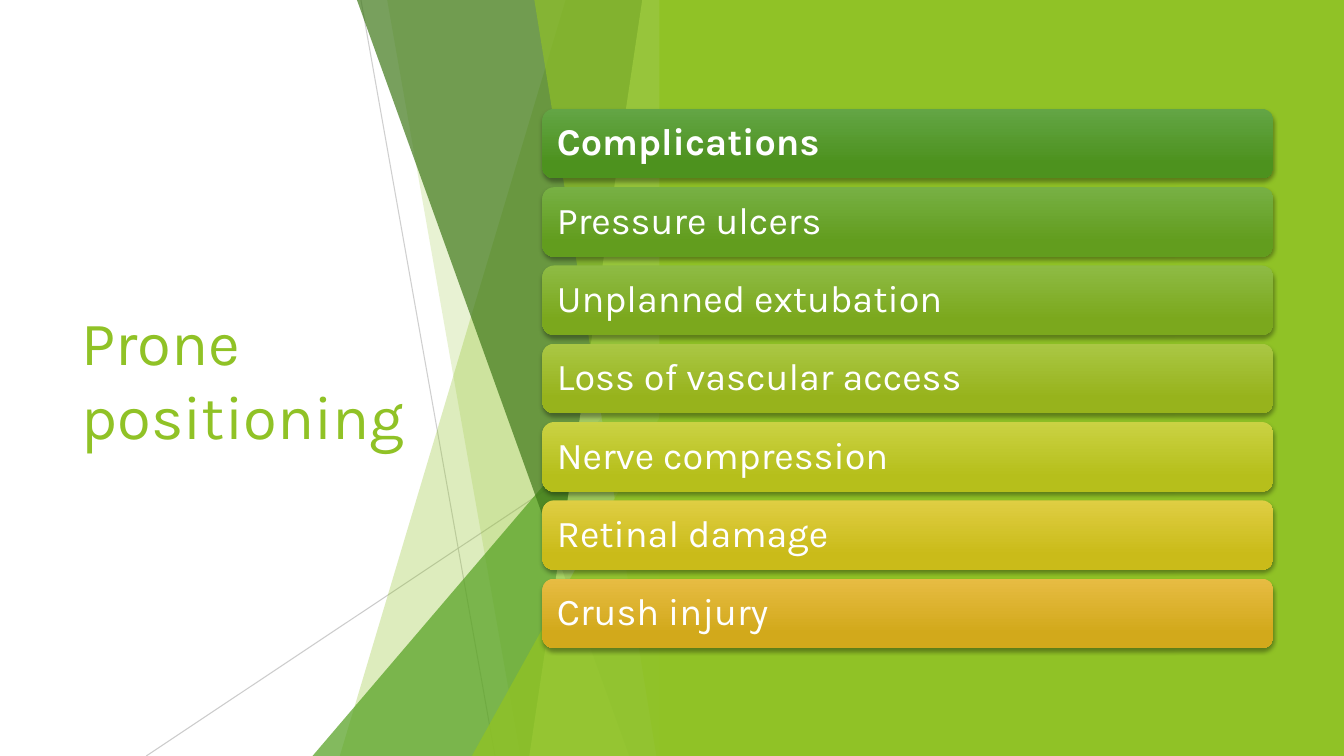
from lxml import etree
from pptx import Presentation
from pptx.dml.color import RGBColor
from pptx.enum.shapes import MSO_CONNECTOR, MSO_SHAPE
from pptx.enum.text import MSO_ANCHOR, MSO_AUTO_SIZE, PP_ALIGN
from pptx.oxml.ns import qn
from pptx.util import Inches, Pt

STRAIGHT = MSO_CONNECTOR.STRAIGHT
TRIANGLE, RECT, ROUNDED = MSO_SHAPE.ISOSCELES_TRIANGLE, MSO_SHAPE.RECTANGLE, MSO_SHAPE.ROUNDED_RECTANGLE
MIDDLE, LEFT, NO_FIT = MSO_ANCHOR.MIDDLE, PP_ALIGN.LEFT, MSO_AUTO_SIZE.NONE

WIDTH, HEIGHT = 13.33, 7.5
FONT = "Karla"
COLORS = {"lime": "90C226", "green": "54A021", "forest": "3F7819", "pale": "C0E474",
          "gray": "BFBFBF", "white": "FFFFFF", "shadow": "000000"}
BARS = [
    ("Complications", "63A545", "4D921E"),
    ("Pressure ulcers", "77B044", "629D1E"),
    ("Unplanned extubation", "8EBB44", "7BA81D"),
    ("Loss of vascular access", "AAC744", "97B31C"),
    ("Nerve compression", "CAD243", "B6BF1B"),
    ("Retinal damage", "DFCE43", "CABB19"),
    ("Crush injury", "E7BC43", "D2A91B"),
]
RAYS = [(3.08, 0, 1.75, 75), (0, 4.03, 5.21, 80)]
FACETS = [
    ("band", 1.05, 3.29, "lime", 30),
    ("band", 2.82, 1.5, "lime", 20),
    ("triangle", 3.56, 3.33, "green", 72),
    ("band", 3.12, 0.42, "forest", 70),
    ("band", 0.29, 1.41, "pale", 70),
    ("band", 1.36, 0.15, "lime", 65),
    ("triangle", 1.98, 3.93, "lime", 80),
]


def rgb(name):
    """Return the color for a palette name or a hex string."""
    return RGBColor.from_string(COLORS.get(name, name))


def set_alpha(shape, percent):
    """Make the shape's solid color partly transparent."""
    color = shape._element.spPr.find(".//" + qn("a:srgbClr"))
    etree.SubElement(color, qn("a:alpha"), val=str(percent * 1000))


def paint(shape, color):
    """Give the shape a flat fill without outline or shadow."""
    shape.shadow.inherit = False
    shape.line.fill.background()
    shape.fill.solid()
    shape.fill.fore_color.rgb = rgb(color)


def write(tf, text, formats):
    """Write one left-aligned, vertically centered paragraph."""
    tf.word_wrap = True
    tf.auto_size = NO_FIT
    tf.vertical_anchor = MIDDLE
    p = tf.paragraphs[0]
    p.alignment = LEFT
    r = p.add_run()
    r.text = text
    for key, value in {"name": FONT, **formats}.items():
        setattr(r.font, key, value)
    return p, r


def add_title(s, box):
    """Place the slide title in the box."""
    title = s.shapes.title
    title.left, title.top, title.width, title.height = map(Inches, box)
    r = write(title.text_frame, "Prone positioning", {"size": Pt(44)})[1]
    r.font.color.rgb = rgb("lime")


def add_facets(s, box):
    """Draw rays and translucent facets measured from the box's right edge."""
    left, top, width, height = box
    right, bottom = left + width, top + height
    for start, drop, end, alpha in RAYS:
        ray = s.shapes.add_connector(STRAIGHT, Inches(right - start), Inches(top + drop),
                                     Inches(right - end), Inches(bottom))
        ray.line.color.rgb = rgb("gray")
        ray.line.width = Pt(0.75)
        set_alpha(ray, alpha)
        etree.SubElement(ray._element.spPr, qn("a:effectLst"))
    for kind, first, second, color, alpha in FACETS:
        if kind == "band":
            corners = [(right, top), (right, bottom), (right - second, bottom)]
            builder = s.shapes.build_freeform(Inches(right - first), Inches(top))
            builder.add_line_segments([(Inches(x), Inches(y)) for x, y in corners])
            facet = builder.convert_to_shape()
        else:
            facet = s.shapes.add_shape(TRIANGLE, Inches(right - first), Inches(top + second),
                                       Inches(first), Inches(height - second))
            facet.adjustments[0] = 1
        paint(facet, color)
        set_alpha(facet, alpha)


def add_panel(s, box):
    """Fill the box with the lime background."""
    paint(s.shapes.add_shape(RECT, *map(Inches, box)), "lime")


def add_shadow(shape):
    """Add a soft shadow below the shape."""
    shape.shadow.inherit = False
    effects = shape._element.spPr.find(qn("a:effectLst"))
    shadow = etree.SubElement(effects, qn("a:outerShdw"), blurRad=str(Pt(3)), dist=str(Pt(2)),
                              dir="5400000", algn="ctr", rotWithShape="0")
    color = etree.SubElement(shadow, qn("a:srgbClr"), val=COLORS["shadow"])
    etree.SubElement(color, qn("a:alpha"), val="35000")


def add_bars(s, box):
    """Stack equal gradient bars down the box, with the first as heading."""
    left, top, width, height = box
    bar_height = 0.69
    pitch = (height - bar_height) / (len(BARS) - 1)
    for row, (text, light, dark) in enumerate(BARS):
        bar = s.shapes.add_shape(ROUNDED, Inches(left), Inches(top + row * pitch),
                                 Inches(width), Inches(bar_height))
        bar.line.fill.background()
        bar.fill.gradient()
        bar.fill.gradient_angle = 270
        for stop, position, color in zip(bar.fill.gradient_stops, (0, 0.78), (light, dark)):
            stop.position = position
            stop.color.rgb = rgb(color)
        add_shadow(bar)
        tf = bar.text_frame
        for side in ("left", "right", "top", "bottom"):
            setattr(tf, "margin_" + side, Inches(0.11))
        p, r = write(tf, text, {"size": Pt(27), "bold": row == 0})
        p.line_spacing = 0.9
        r.font.color.rgb = rgb("white")


def main():
    """Build and save the slide."""
    prs = Presentation()
    prs.slide_width, prs.slide_height = Inches(WIDTH), Inches(HEIGHT)
    s = prs.slides.add_slide(prs.slide_layouts[5])
    add_title(s, (0.71, 1.51, 3.88, 4.48))
    add_facets(s, (1.45, 0, 5.21, HEIGHT))
    add_panel(s, (6.54, 0, WIDTH - 6.54, HEIGHT))
    add_bars(s, (5.38, 1.08, 7.25, 5.35))
    prs.save("out.pptx")


if __name__ == "__main__":
    main()
